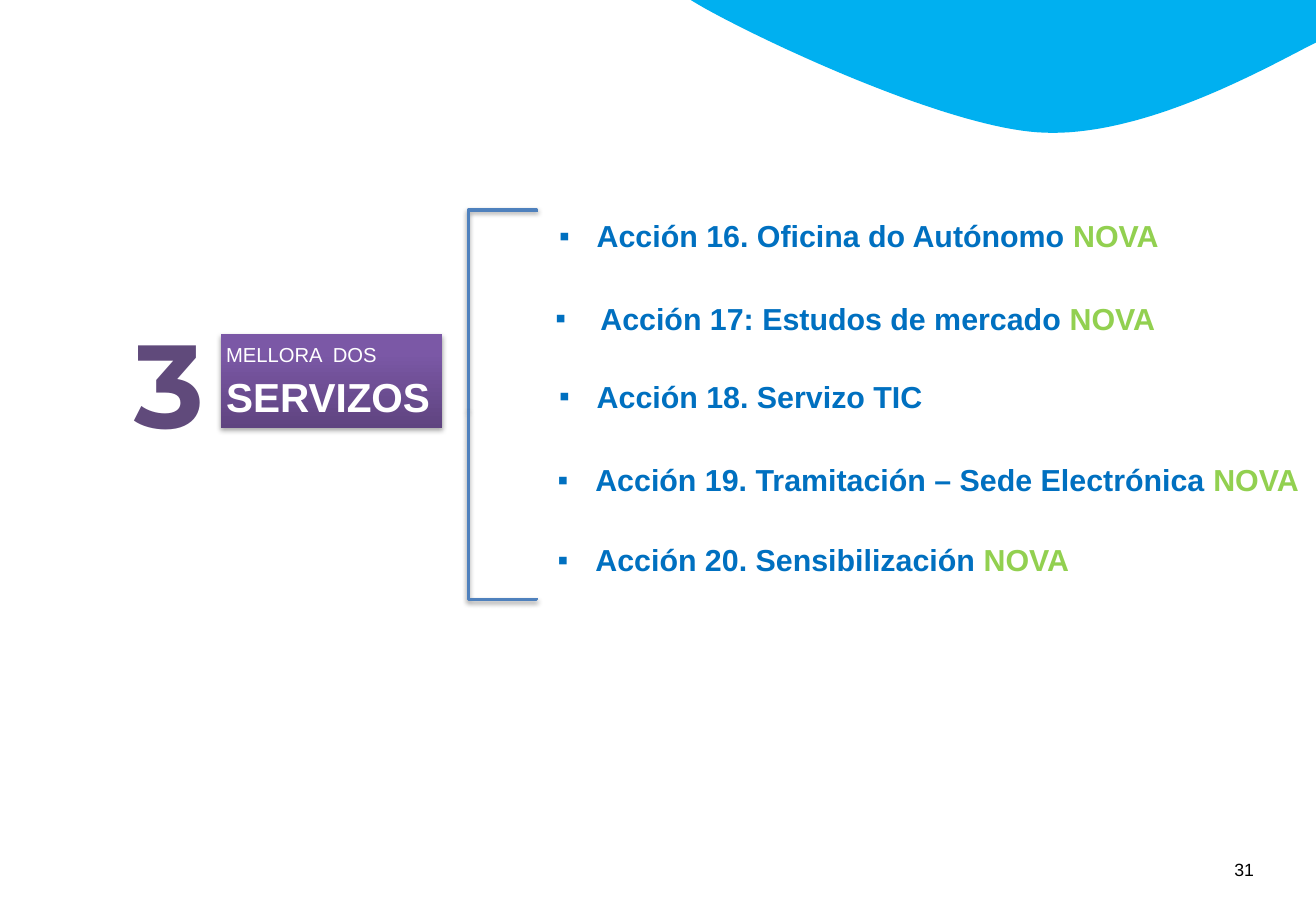
from copy import deepcopy

from lxml.etree import SubElement
from pptx import Presentation
from pptx.dml.color import RGBColor
from pptx.enum.shapes import MSO_CONNECTOR, MSO_SHAPE
from pptx.enum.text import MSO_ANCHOR, PP_ALIGN
from pptx.oxml.ns import qn
from pptx.util import Inches, Pt

WIDTH, HEIGHT = Inches(10.83), Inches(7.5)
BLUE, GREEN, PURPLE, WHITE = "0070C0", "92D050", "604A7B", "FFFFFF"

# left, top, width, height in percent of the slide; hanging indent in inches
ACTIONS = [
    ((42.11, 23.2, 54.66, 5.33), 0.31, "Acción 16. Oficina do Autónomo ", "NOVA"),
    ((41.83, 32.27, 48.94, 9.47), 0.37, "Acción 17: Estudos de mercado ", "NOVA"),
    ((42.11, 40.8, 54.2, 5.33), 0.31, "Acción 18. Servizo TIC", ""),
    ((42.01, 50, 57.99, 13.47), 0.31, "Acción 19. Tramitación – Sede Electrónica ", "NOVA"),
    ((42.01, 58.8, 54.2, 9.47), 0.31, "Acción 20. Sensibilización ", "NOVA"),
]

# Wave outline: two cubic curves, points in percent of the slide
WAVE = [
    [(52.35, -0.13), (55.12, 2.53), (70.91, 13.73), (78.86, 14.53)],
    [(78.86, 14.53), (86.8, 15.33), (96.49, 7.2), (100, 4.67)],
]


def x(percent):
    return round(WIDTH * percent / 100)


def y(percent):
    return round(HEIGHT * percent / 100)


def place(box):
    left, top, width, height = box
    return x(left), y(top), x(width), y(height)


def color(hex_code):
    return RGBColor.from_string(hex_code)


def add_run(p, text, size, hex_code, bold=False, font="Arial"):
    r = p.add_run()
    r.text = text
    r.font.name, r.font.size, r.font.bold = font, Pt(size), bold
    r.font.color.rgb = color(hex_code)


def add_shadow(sp, alpha, distance):
    """Put a soft black shadow below a shape or connector."""
    spPr = sp.element.spPr
    for old in spPr.findall(qn("a:effectLst")):
        spPr.remove(old)
    effects = SubElement(spPr, qn("a:effectLst"))
    shadow = SubElement(effects, qn("a:outerShdw"), blurRad=str(Pt(3.1)),
                        dist=str(Pt(distance)), dir="5400000", rotWithShape="0")
    black = SubElement(shadow, qn("a:srgbClr"), val="000000")
    SubElement(black, qn("a:alpha"), val=str(alpha * 1000))


def add_panel(s, box):
    """Add a borderless rectangle with top-left text; return it and its paragraph."""
    sp = s.shapes.add_shape(MSO_SHAPE.RECTANGLE, *place(box))
    sp.shadow.inherit = False
    sp.line.fill.background()
    tf = sp.text_frame
    tf.word_wrap = True
    tf.vertical_anchor = MSO_ANCHOR.TOP
    tf.margin_left = tf.margin_right = Inches(0.04)
    tf.margin_top = tf.margin_bottom = Inches(0.05)
    p = tf.paragraphs[0]
    p.alignment = PP_ALIGN.LEFT
    return sp, p


def add_action(s, box, indent, text, tag):
    sp, p = add_panel(s, box)
    sp.fill.solid()
    sp.fill.fore_color.rgb = color(WHITE)
    pPr = p._p.get_or_add_pPr()
    pPr.set("marL", str(Inches(indent)))
    pPr.set("indent", str(-Inches(indent)))
    SubElement(pPr, qn("a:buFont"), typeface="Arial")
    SubElement(pPr, qn("a:buChar"), char="▪")
    add_run(p, text, 18, BLUE, True)
    if tag:
        add_run(p, tag, 18, GREEN, True)


def add_label(s, box, text, size, hex_code, wrap=True, **style):
    tf = s.shapes.add_textbox(*place(box)).text_frame
    tf.word_wrap = wrap
    add_run(tf.paragraphs[0], text, size, hex_code, **style)


def add_badge(s, box):
    sp, p = add_panel(s, box)
    sp.fill.gradient()
    sp.fill.gradient_angle = 90
    stop_list = sp.element.xpath(".//a:gsLst")[0]
    stop_list.append(deepcopy(stop_list[-1]))
    shades = [(0, "5F4480"), (0.8, "7B58A6"), (1, "7C57A8")]
    for stop, (position, shade) in zip(sp.fill.gradient_stops, shades):
        stop.position = position
        stop.color.rgb = color(shade)
    add_shadow(sp, 35, 1.8)
    p.line_spacing = 1.1
    add_run(p, "MELLORA  DOS ", 12, WHITE)
    add_run(p, "SERVIZOS", 24, WHITE, True)


def add_bracket_arm(s, center_y, length, rotation, flip_v, bend):
    """Add one half of the bracket: an elbow turned to run vertically."""
    half, depth = y(length) // 2, x(5.17) // 2
    cx, cy = x(38.18), y(center_y)
    rise = depth if flip_v else -depth
    c = s.shapes.add_connector(MSO_CONNECTOR.ELBOW, cx + half, cy + rise,
                               cx - half, cy - rise)
    c.line.color.rgb = color("4F81BD")
    c.line.width = Pt(2)
    c.element.spPr.find(qn("a:xfrm")).set("rot", str(rotation * 60000))
    guides = c.element.xpath(".//a:avLst")[0]
    SubElement(guides, qn("a:gd"), name="adj1", fmla=f"val {bend}")
    add_shadow(c, 38, 1.6)


def curve_points(curve, steps=40):
    for i in range(steps + 1):
        t = i / steps
        weights = ((1 - t) ** 3, 3 * t * (1 - t) ** 2, 3 * t * t * (1 - t), t ** 3)
        px, py = (sum(w * v for w, v in zip(weights, axis)) for axis in zip(*curve))
        yield x(px), y(py)


def add_wave(s):
    points = [pt for curve in WAVE for pt in curve_points(curve)] + [(x(100), 0)]
    builder = s.shapes.build_freeform(*points[0])
    builder.add_line_segments(points[1:], close=True)
    sp = builder.convert_to_shape()
    sp.shadow.inherit = False
    sp.fill.solid()
    sp.fill.fore_color.rgb = color("00B0F0")
    sp.line.fill.background()


def main():
    prs = Presentation()
    prs.slide_width, prs.slide_height = WIDTH, HEIGHT
    s = prs.slides.add_slide(prs.slide_layouts[6])

    # Page decoration and number
    add_wave(s)
    add_label(s, (92.89, 93.6, 4.34, 3.73), "31", 10.5, "000000")

    # List of actions
    for action in ACTIONS:
        add_action(s, *action)

    # Bracket, upper and lower half
    add_bracket_arm(s, 34.13, 21.73, 90, True, 100900)
    add_bracket_arm(s, 55.33, 20.67, 270, False, 100600)

    # Numbered heading
    add_badge(s, (16.81, 36.67, 16.81, 10.27))
    add_label(s, (9.33, 33.47, 7.94, 17.07), "3", 70, PURPLE,
              wrap=False, bold=True, font="Montserrat")

    prs.save("out.pptx")


if __name__ == "__main__":
    main()
